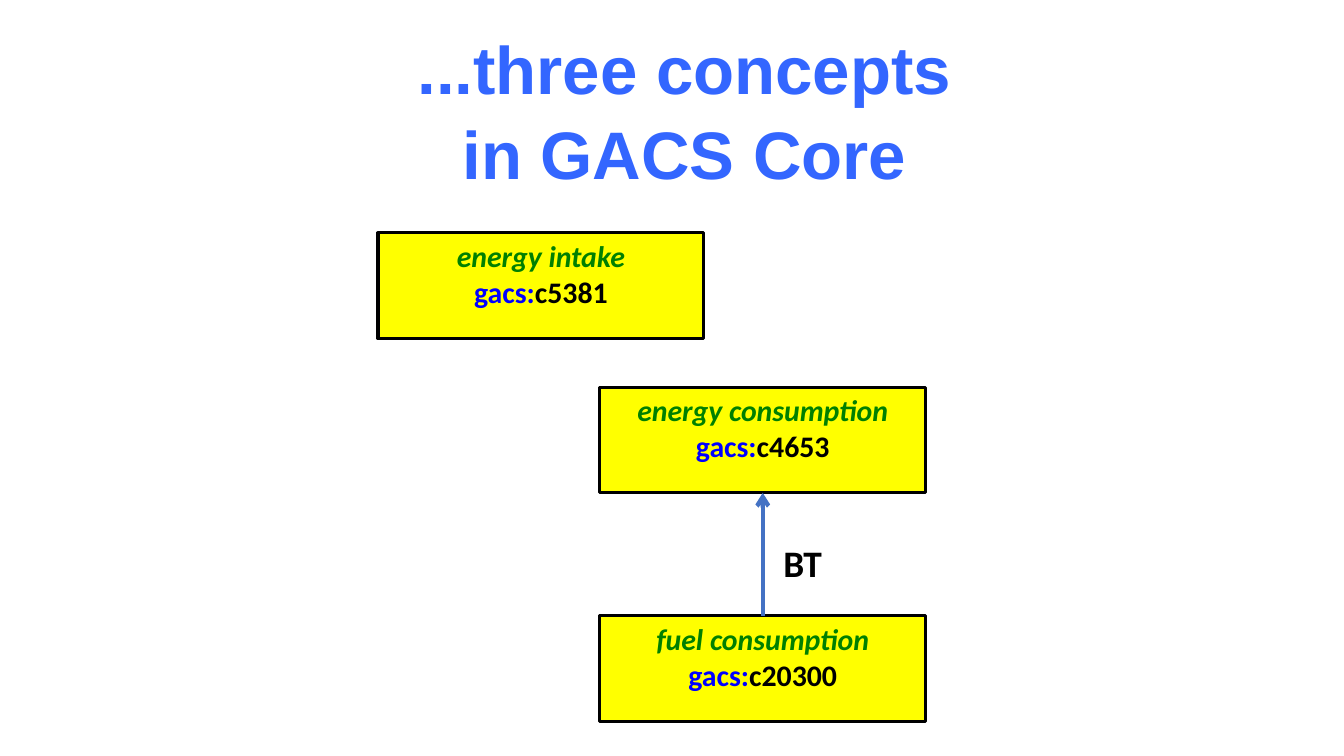
"""Build a slide showing three GACS Core concepts and one broader-term link."""
from lxml.etree import SubElement
from pptx import Presentation
from pptx.dml.color import RGBColor
from pptx.enum.shapes import MSO_CONNECTOR, MSO_SHAPE
from pptx.enum.text import MSO_ANCHOR, MSO_AUTO_SIZE, PP_ALIGN
from pptx.oxml.ns import qn
from pptx.util import Inches, Pt


def color(hex_value):
    return RGBColor.from_string(hex_value)


def add_text(paragraph, text, size, hex_value, font="Calibri", italic=False):
    run = paragraph.add_run()
    run.text = text
    run.font.size = Pt(size)
    run.font.name = font
    run.font.bold = True
    run.font.italic = italic
    run.font.color.rgb = color(hex_value)


deck = Presentation()
deck.slide_width, deck.slide_height = Inches(13.33), Inches(7.5)
slide = deck.slides.add_slide(deck.slide_layouts[5])

heading = slide.shapes.title
heading.left, heading.top = Inches(0.79), Inches(0.32)
heading.width, heading.height = Inches(12), Inches(1.72)
heading_frame = heading.text_frame
heading_frame.auto_size = MSO_AUTO_SIZE.NONE
heading_frame.word_wrap = True
heading_frame.vertical_anchor = MSO_ANCHOR.BOTTOM
heading_frame.margin_left = heading_frame.margin_right = Inches(0.13)
heading_frame.margin_top = heading_frame.margin_bottom = Inches(0.13)
heading_lines = [heading_frame.paragraphs[0], heading_frame.add_paragraph()]
for line, words in zip(heading_lines, ["...three concepts", "in GACS Core"]):
    line.alignment = PP_ALIGN.CENTER
    line.line_spacing = 1.05
    add_text(line, words, 48, "3366FF", font="Arial")

concepts = [
    ("energy consumption", "c4653", 5.95, 3.84),
    ("fuel consumption", "c20300", 5.95, 6.11),
    ("energy intake", "c5381", 3.75, 2.31),
]
concept_boxes = {}
for label, code, left, top in concepts:
    box = slide.shapes.add_shape(
        MSO_SHAPE.RECTANGLE, Inches(left), Inches(top), Inches(3.23), Inches(1.05))
    box.shadow.inherit = False
    box.fill.solid()
    box.fill.fore_color.rgb = color("FFFF00")
    box.line.color.rgb = color("000000")
    box.line.width = Pt(2.25)
    box.text_frame.word_wrap = True
    box.text_frame.vertical_anchor = MSO_ANCHOR.TOP
    label_line = box.text_frame.paragraphs[0]
    code_line = box.text_frame.add_paragraph()
    label_line.alignment = code_line.alignment = PP_ALIGN.CENTER
    add_text(label_line, label, 21.3, "008000", italic=True)
    add_text(code_line, "gacs:", 21.3, "0000FF")
    add_text(code_line, code, 21.3, "000000")
    concept_boxes[label] = box

broader = slide.shapes.add_connector(MSO_CONNECTOR.STRAIGHT, 0, 0, 0, 0)
broader.begin_connect(concept_boxes["fuel consumption"], 0)
broader.end_connect(concept_boxes["energy consumption"], 2)
broader.line.color.rgb = color("4472C4")
broader.line.width = Pt(3)
SubElement(broader.line._get_or_add_ln(), qn("a:tailEnd"), type="arrow")
SubElement(broader._element.spPr, qn("a:effectLst"))

relation = slide.shapes.add_textbox(
    Inches(7.67), Inches(5.31), Inches(0.59), Inches(0.55))
relation.text_frame.word_wrap = False
relation.text_frame.auto_size = MSO_AUTO_SIZE.SHAPE_TO_FIT_TEXT
add_text(relation.text_frame.paragraphs[0], "BT", 26.7, "000000")

deck.save("out.pptx")
